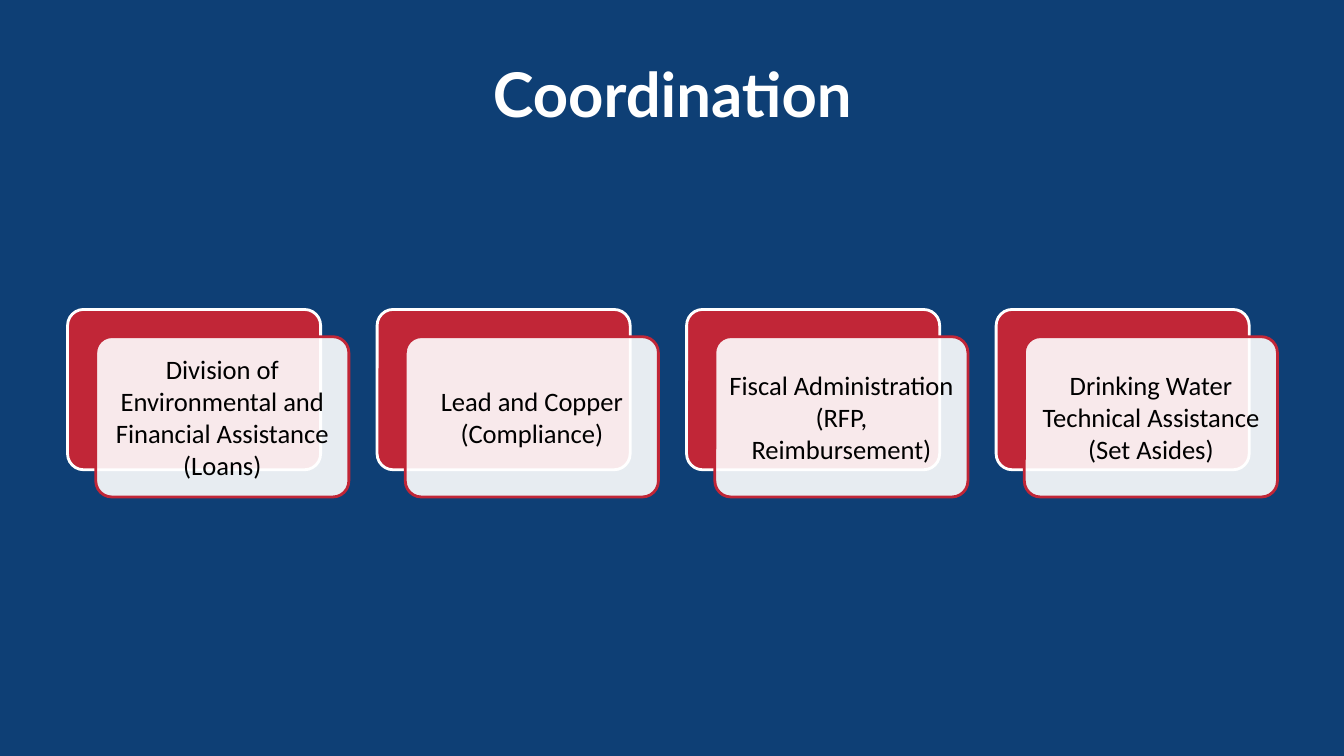
"""Build the Coordination slide with four layered cards."""
from lxml import etree
from pptx import Presentation
from pptx.dml.color import RGBColor
from pptx.enum.shapes import MSO_SHAPE
from pptx.enum.text import MSO_ANCHOR, PP_ALIGN
from pptx.oxml.ns import qn
from pptx.util import Inches, Pt

NAVY, RED, WHITE, BLACK = "0E3F75", "C12637", "FFFFFF", "000000"
TITLE = "Coordination"
PARTNERS = [
    "Division of Environmental and Financial Assistance (Loans)",
    "Lead and Copper (Compliance)",
    "Fiscal Administration (RFP, Reimbursement)",
    "Drinking Water Technical Assistance (Set Asides)",
]
TITLE_FORMAT = {"name": "Lato", "size": Pt(44), "bold": True}
LABEL_FORMAT = {"name": "Calibri", "size": Pt(19), "bold": False}
CARD_LEFT, CARD_TOP, CARD_PITCH = 0.67, 3.07, 3.07
CARD_WIDTH, CARD_HEIGHT = 2.51, 1.59
FRONT_OFFSET_X, FRONT_OFFSET_Y = 0.28, 0.27
LABEL_INSET = 0.045


def color(value):
    return RGBColor.from_string(value)


def add_card(slide, left, top, fill, line, opacity=100):
    shape = slide.shapes.add_shape(
        MSO_SHAPE.ROUNDED_RECTANGLE,
        Inches(left), Inches(top), Inches(CARD_WIDTH), Inches(CARD_HEIGHT))
    shape.adjustments[0] = 0.1
    shape.shadow.inherit = False
    shape.fill.solid()
    shape.fill.fore_color.rgb = color(fill)
    shape.line.color.rgb = color(line)
    shape.line.width = Pt(2)
    if opacity < 100:
        fill_color = shape.fill._xPr.find(qn("a:solidFill"))[0]
        etree.SubElement(fill_color, qn("a:alpha"), val=str(opacity * 1000))


def add_text(slide, text, box, text_color, font_format, margin):
    shape = slide.shapes.add_textbox(*map(Inches, box))
    frame = shape.text_frame
    frame.word_wrap = True
    frame.vertical_anchor = MSO_ANCHOR.MIDDLE
    for side in ("left", "top", "right", "bottom"):
        setattr(frame, f"margin_{side}", Inches(margin))
    paragraph = frame.paragraphs[0]
    paragraph.alignment = PP_ALIGN.CENTER
    run = paragraph.add_run()
    run.text = text
    run.font.color.rgb = color(text_color)
    for name, value in font_format.items():
        setattr(run.font, name, value)


def main():
    presentation = Presentation()
    presentation.slide_width = Inches(13.33)
    presentation.slide_height = Inches(7.5)
    slide = presentation.slides.add_slide(presentation.slide_layouts[6])
    slide.background.fill.solid()
    slide.background.fill.fore_color.rgb = color(NAVY)
    add_text(slide, TITLE, (0.67, 0.3, 12, 1.25), WHITE, TITLE_FORMAT, 0.05)

    for index, partner in enumerate(PARTNERS):
        left = CARD_LEFT + index * CARD_PITCH
        front_left, front_top = left + FRONT_OFFSET_X, CARD_TOP + FRONT_OFFSET_Y
        add_card(slide, left, CARD_TOP, RED, WHITE)
        add_card(slide, front_left, front_top, WHITE, RED, opacity=90)
        label_box = (front_left + LABEL_INSET, front_top + LABEL_INSET,
                     CARD_WIDTH - 2 * LABEL_INSET, CARD_HEIGHT - 2 * LABEL_INSET)
        add_text(slide, partner, label_box, BLACK, LABEL_FORMAT, 0.08)

    presentation.save("out.pptx")


if __name__ == "__main__":
    main()
